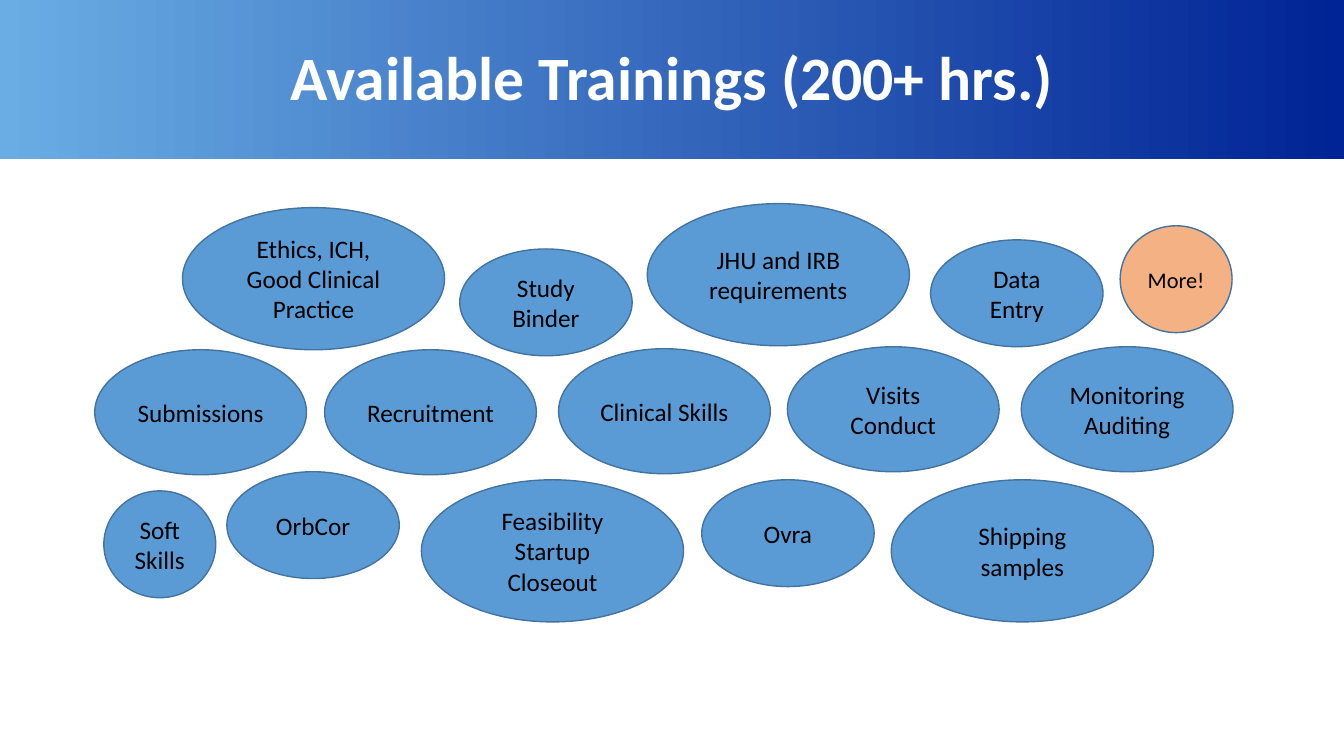
"""Build the slide of available trainings as a cloud of ellipses."""
import pptx
import pptx.dml.color
import pptx.enum.shapes
import pptx.enum.text
import pptx.util

Inches = pptx.util.Inches
RGBColor = pptx.dml.color.RGBColor
SHAPE = pptx.enum.shapes.MSO_SHAPE

WHITE = RGBColor(0xFF, 0xFF, 0xFF)
BLACK = RGBColor(0, 0, 0)
SKY = RGBColor(0x6A, 0xAD, 0xE4)
NAVY = RGBColor(0x00, 0x23, 0x95)
BLUE = RGBColor(0x5B, 0x9B, 0xD5)
OUTLINE = RGBColor(0x43, 0x73, 0x9E)
ORANGE = RGBColor(0xF4, 0xB1, 0x83)

LARGE, MEDIUM, SMALL, ROUND = (2.6, 1.41), (2.1, 1.24), (1.71, 1.06), (1.11, 1.06)

TRAININGS = [
    ("Submissions", MEDIUM, 0.94, 3.47),
    ("Recruitment", MEDIUM, 3.22, 3.47),
    ("Monitoring\nAuditing", MEDIUM, 10.13, 3.44),
    ("Clinical Skills", MEDIUM, 5.54, 3.46),
    ("Visits Conduct", MEDIUM, 7.81, 3.44),
    ("Study Binder", SMALL, 4.56, 2.47),
    ("JHU and IRB requirements", LARGE, 6.42, 2.02),
    ("Ethics, ICH,\nGood Clinical Practice", LARGE, 1.81, 2.06),
    ("Feasibility\nStartup\nCloseout", LARGE, 4.18, 4.76),
    ("Shipping samples", LARGE, 8.84, 4.76),
    ("OrbCor", SMALL, 2.25, 4.68),
    ("Ovra", SMALL, 6.96, 4.76),
    ("Data Entry", SMALL, 9.23, 2.38),
    ("More!", ROUND, 11.11, 2.24),
    ("Soft Skills", ROUND, 1.03, 4.87),
]


class TrainingPage:
    font_name = "Calibri"

    def __init__(self, deck):
        self.page = deck.slides.add_slide(deck.slide_layouts[5])

    def label(self, shape, text, size, color, bold=False, line_spacing=1.0):
        frame = shape.text_frame
        frame.text = text
        frame.word_wrap = True
        frame.vertical_anchor = pptx.enum.text.MSO_ANCHOR.MIDDLE
        font_format = {"name": self.font_name, "size": pptx.util.Pt(size), "bold": bold}
        for para in frame.paragraphs:
            para.alignment = pptx.enum.text.PP_ALIGN.CENTER
            para.line_spacing = line_spacing
            for span in para.runs:
                for attribute, value in font_format.items():
                    setattr(span.font, attribute, value)
                span.font.color.rgb = color

    def shape(self, kind, left, top, width, height):
        shape = self.page.shapes.add_shape(
            kind, Inches(left), Inches(top), Inches(width), Inches(height))
        shape.shadow.inherit = False
        return shape

    def band(self, width, height):
        band = self.shape(SHAPE.RECTANGLE, 0, 0, width, height)
        band.line.fill.background()
        band.fill.gradient()
        band.fill.gradient_angle = 0
        for stop, color, position in zip(band.fill.gradient_stops, (SKY, NAVY), (0, 1)):
            stop.color.rgb = color
            stop.position = position
        self.page.shapes.title._element.addprevious(band._element)

    def title(self, text, left, top, width, height):
        title = self.page.shapes.title
        place = {"left": left, "top": top, "width": width, "height": height}
        for attribute, value in place.items():
            setattr(title, attribute, Inches(value))
        self.label(title, text, 44, WHITE, bold=True, line_spacing=0.9)

    def bubble(self, text, measure, left, top, fill=BLUE, size=18):
        bubble = self.shape(SHAPE.OVAL, left, top, *measure)
        bubble.fill.solid()
        bubble.fill.fore_color.rgb = fill
        bubble.line.color.rgb = OUTLINE
        bubble.line.width = pptx.util.Pt(1)
        self.label(bubble, text, size, BLACK)


def main():
    deck = pptx.Presentation()
    deck.slide_width, deck.slide_height = Inches(13.33), Inches(7.5)
    page = TrainingPage(deck)
    page.band(13.33, 1.58)
    page.title("Available Trainings (200+ hrs.)", 0.92, 0.07, 11.5, 1.45)
    for text, measure, left, top in TRAININGS:
        accent = {"fill": ORANGE, "size": 16} if text == "More!" else {}
        page.bubble(text, measure, left, top, **accent)
    deck.save("out.pptx")


if __name__ == "__main__":
    main()
